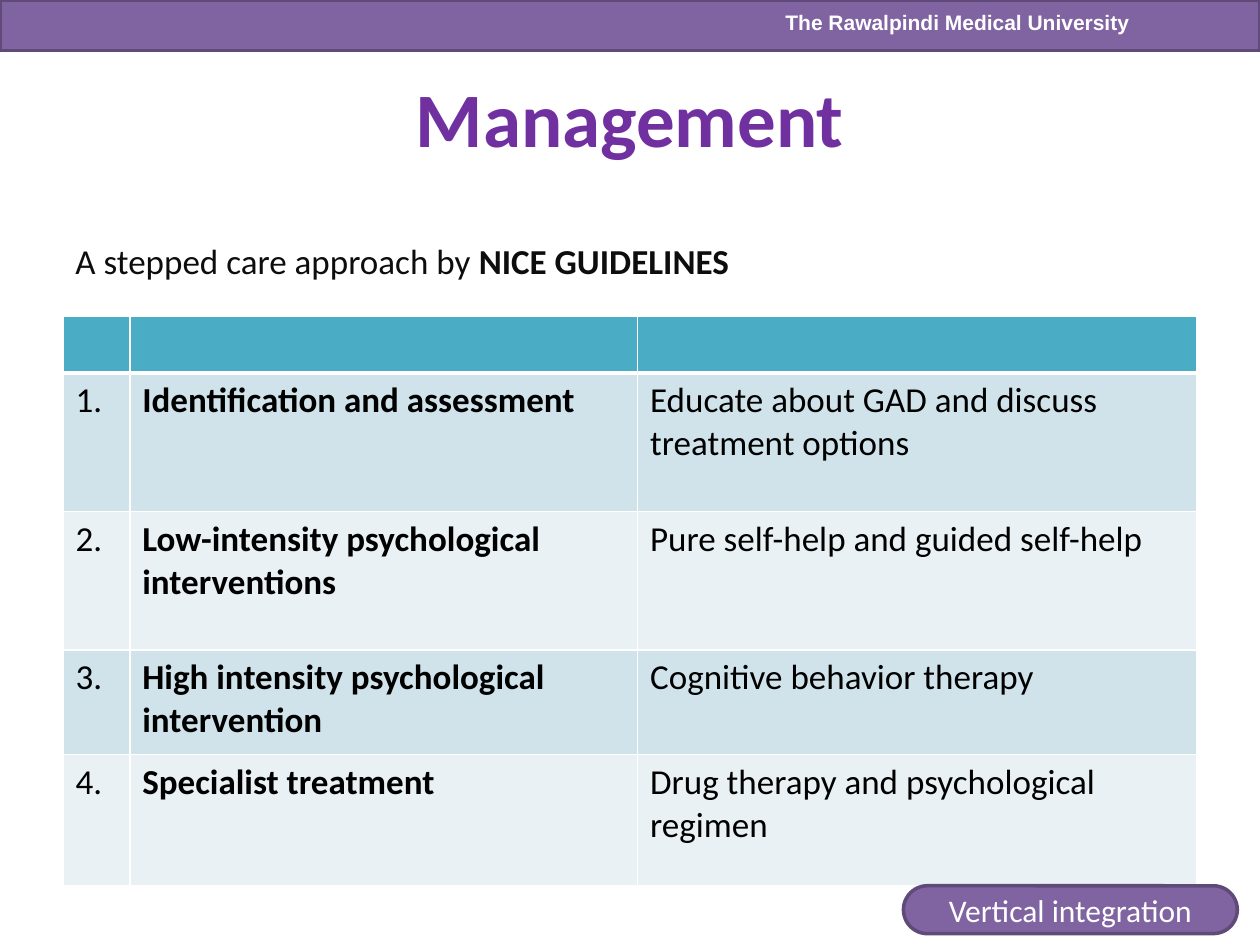
from dataclasses import dataclass

from lxml.etree import SubElement
from pptx import Presentation
from pptx.dml.color import RGBColor
from pptx.enum.shapes import MSO_SHAPE
from pptx.enum.text import MSO_ANCHOR, MSO_AUTO_SIZE, PP_ALIGN
from pptx.oxml.ns import qn
from pptx.util import Inches, Pt


@dataclass(frozen=True)
class Theme:
    purple: str = "8064A2"
    edge: str = "5F4A78"
    title: str = "7030A0"
    head: str = "4BACC6"
    bands: tuple = ("D0E3EA", "E9F1F5")
    white: str = "FFFFFF"
    black: str = "000000"
    intro: str = "0D0D0D"
    font: str = "Calibri"
    brand_font: str = "Arial"
    title_size: int = 44
    body_size: int = 20
    tag_size: int = 18
    brand_size: int = 12


theme = Theme()


def style(para, size, color, bold=False, font=theme.font):
    for run in para.runs:
        run.font.name = font
        run.font.size = Pt(size)
        run.font.bold = bold
        run.font.color.rgb = RGBColor.from_string(color)


def add_block(kind, *box):
    """Add a purple shape with a darker edge."""
    shape = slide.shapes.add_shape(kind, *map(Inches, box))
    shape.shadow.inherit = False
    shape.fill.solid()
    shape.fill.fore_color.rgb = RGBColor.from_string(theme.purple)
    shape.line.color.rgb = RGBColor.from_string(theme.edge)
    shape.line.width = Pt(2)
    return shape


prs = Presentation()
prs.slide_width, prs.slide_height = Inches(10), Inches(7.5)
slide = prs.slides.add_slide(prs.slide_layouts[5])

# Top band
add_block(MSO_SHAPE.RECTANGLE, 0, 0, 10, 0.4)
brand = slide.shapes.add_textbox(Inches(6.12), Inches(0.03), Inches(2.96), Inches(0.3))
frame = brand.text_frame
frame.word_wrap = False
frame.auto_size = MSO_AUTO_SIZE.SHAPE_TO_FIT_TEXT
frame.text = "The Rawalpindi Medical University"
frame.paragraphs[0].alignment = PP_ALIGN.CENTER
style(frame.paragraphs[0], theme.brand_size, theme.white, True, theme.brand_font)

# Title
title = slide.shapes.title
title.left, title.top = Inches(0.5), Inches(0.3)
title.width, title.height = Inches(9), Inches(1.25)
title.text_frame.text = "Management"
title.text_frame.vertical_anchor = MSO_ANCHOR.MIDDLE
title.text_frame.paragraphs[0].alignment = PP_ALIGN.CENTER
style(title.text_frame.paragraphs[0], theme.title_size, theme.title, True)

# Table of care steps
steps = [
    ("", "", ""),
    ("1.", "Identification and assessment", "Educate about GAD and discuss treatment options"),
    ("2.", "Low-intensity psychological interventions", "Pure self-help and guided self-help"),
    ("3.", "High intensity psychological intervention", "Cognitive behavior therapy"),
    ("4.", "Specialist treatment", "Drug therapy and psychological regimen"),
]
widths = (0.53, 4.03, 4.44)
heights = (0.45, 1.1, 1.1, 0.83, 1.04)
table = slide.shapes.add_table(
    len(steps), len(widths), Inches(0.5), Inches(2.51), Inches(sum(widths)), Inches(sum(heights))
).table
for col, width in zip(table.columns, widths):
    col.width = Inches(width)
for row, height in zip(table.rows, heights):
    row.height = Inches(height)

for i, step in enumerate(steps):
    for j, text in enumerate(step):
        cell = table.cell(i, j)
        props = cell._tc.get_or_add_tcPr()
        for side in ("lnL", "lnR", "lnT", "lnB"):
            thick = (i, side) in ((0, "lnB"), (1, "lnT"))
            line = SubElement(props, qn(f"a:{side}"), w=str(Pt(3 if thick else 1)))
            fill = SubElement(line, qn("a:solidFill"))
            SubElement(fill, qn("a:srgbClr"), val=theme.white)
        cell.fill.solid()
        color = theme.bands[(i - 1) % 2] if i else theme.head
        cell.fill.fore_color.rgb = RGBColor.from_string(color)
        if text:
            cell.text_frame.text = text
            style(cell.text_frame.paragraphs[0], theme.body_size, theme.black, j == 1)

# Line above the table
intro = slide.shapes.add_textbox(Inches(0.5), Inches(1.85), Inches(8.72), Inches(0.44))
intro.text_frame.word_wrap = True
intro.text_frame.auto_size = MSO_AUTO_SIZE.SHAPE_TO_FIT_TEXT
para = intro.text_frame.paragraphs[0]
para.text = "A stepped care approach by "
para.add_run().text = "NICE GUIDELINES"
style(para, theme.body_size, theme.intro)
para.runs[1].font.bold = True

# Corner tag
tag = add_block(MSO_SHAPE.ROUNDED_RECTANGLE, 7.17, 7.03, 2.65, 0.38)
tag.adjustments[0] = 0.5
tag.text_frame.text = "Vertical integration"
tag.text_frame.vertical_anchor = MSO_ANCHOR.MIDDLE
tag.text_frame.paragraphs[0].alignment = PP_ALIGN.CENTER
style(tag.text_frame.paragraphs[0], theme.tag_size, theme.white)

prs.save("out.pptx")
